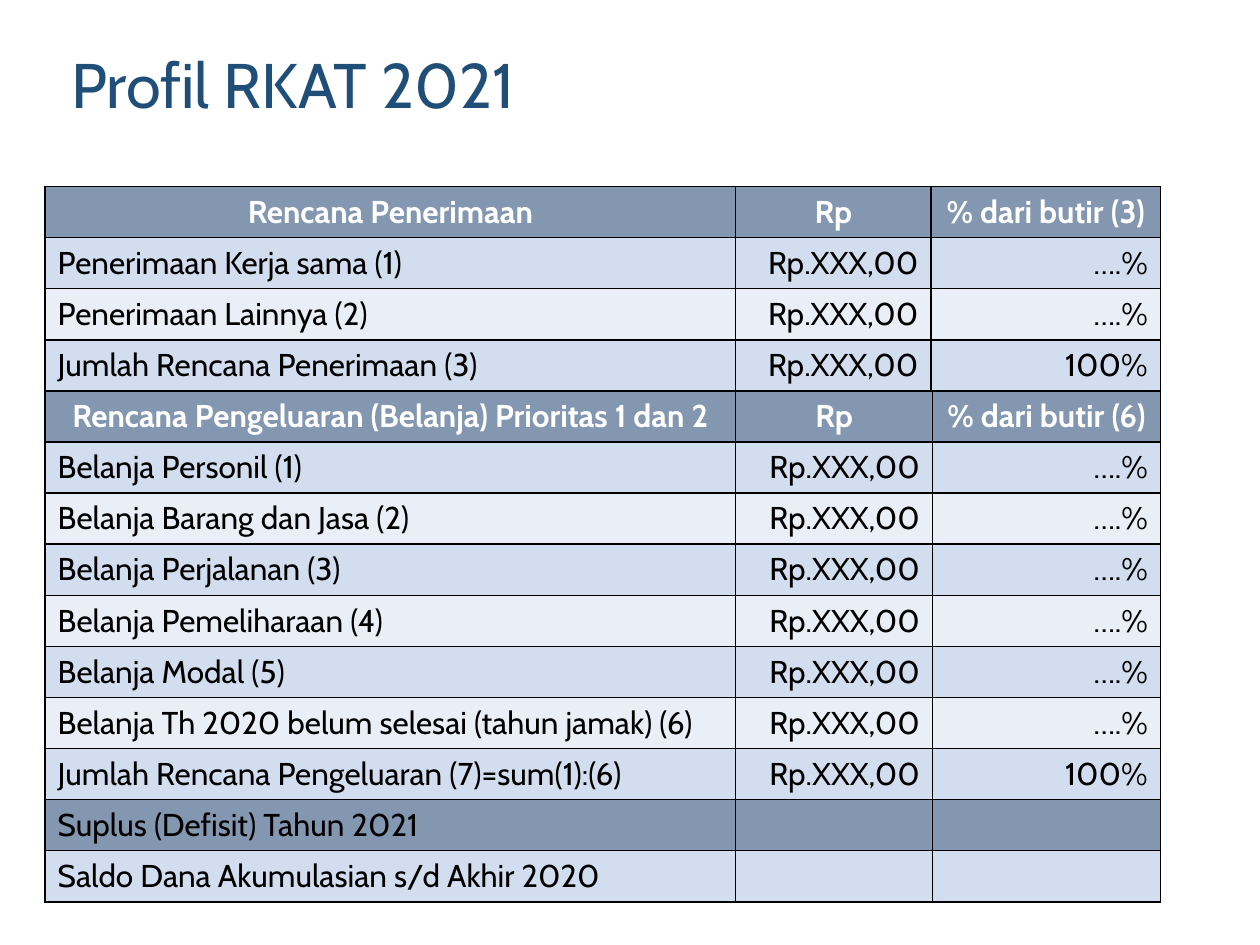
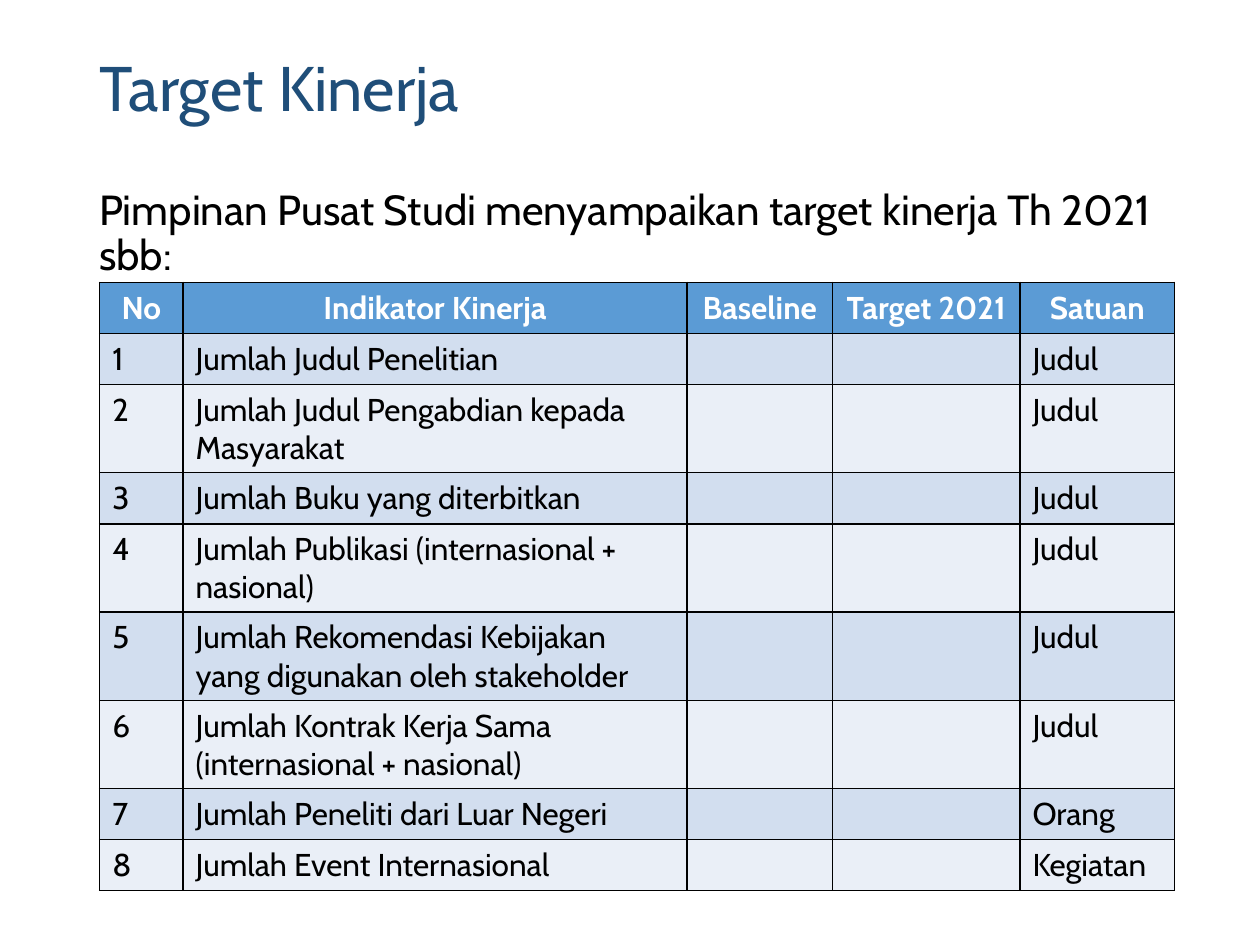
from pptx import Presentation
from pptx.dml.color import RGBColor
from pptx.enum.text import MSO_ANCHOR, PP_ALIGN
from pptx.util import Cm, Pt
from lxml.etree import SubElement
from pptx.oxml.ns import qn

# Shared look
FONT = "Cabin"
HUES = {"title": "1F4E79", "text": "000000", "white": "FFFFFF", "slate": "8497B0",
        "blue": "5B9BD5", "odd": "D2DEEF", "even": "EAEFF7", "rule": "000000"}
LEFT, MID, RIGHT = PP_ALIGN.LEFT, PP_ALIGN.CENTER, PP_ALIGN.RIGHT
ROW = 1.03


def write(para, text, size, hue, bold=False, align=LEFT):
    para.alignment = align
    run = para.add_run()
    run.text = text
    run.font.name, run.font.size, run.font.bold = FONT, Pt(size), bold
    run.font.color.rgb = RGBColor.from_string(HUES[hue])


def grid(slide, left, top, widths, aligns, rows, head, bands=(0,)):
    """Add a ruled table; the rows listed in bands take the head colour."""
    table = slide.shapes.add_table(len(rows), len(widths), Cm(left), Cm(top),
                                   Cm(sum(widths)), Cm(ROW * len(rows))).table
    for col, width in zip(table.columns, widths):
        col.width = Cm(width)
    for r, row in enumerate(rows):
        table.rows[r].height = Cm(ROW)
        fill = head if r in bands else ("even", "odd")[r % 2]
        for c, text in enumerate(row):
            cell = table.cell(r, c)
            props = cell._tc.get_or_add_tcPr()
            for side in ("lnL", "lnR", "lnT", "lnB"):
                line = SubElement(props, qn(f"a:{side}"), w=str(Pt(1)))
                paint = SubElement(line, qn("a:solidFill"))
                SubElement(paint, qn("a:srgbClr"), val=HUES["rule"])
            cell.fill.solid()
            cell.fill.fore_color.rgb = RGBColor.from_string(HUES[fill])
            para = cell.text_frame.paragraphs[0]
            if text and r == 0:
                write(para, text, 18, "white", True, MID)
            elif text:
                write(para, text, 18, "text", False, aligns[c])


deck = Presentation()
deck.slide_width, deck.slide_height = Cm(25.4), Cm(19.05)

# Slides with their titles and the lead text
plan = Presentation  # replaced by the first slide below
boxes = [
    [("Profil RKAT 2021", 36, "title", MSO_ANCHOR.MIDDLE, (1.19, 0.64, 21.9, 2.26))],
    [("Target Kinerja", 36, "title", MSO_ANCHOR.MIDDLE, (1.75, 0, 21.9, 3.68)),
     ("Pimpinan Pusat Studi menyampaikan target kinerja Th 2021 sbb:", 24, "text",
      MSO_ANCHOR.TOP, (1.75, 3.68, 21.9, 2))],
]
slides = []
for group in boxes:
    slide = deck.slides.add_slide(deck.slide_layouts[6])
    slides.append(slide)
    for text, size, hue, anchor, place in group:
        frame = slide.shapes.add_textbox(*map(Cm, place)).text_frame
        frame.word_wrap = True
        frame.vertical_anchor = anchor
        para = frame.paragraphs[0]
        para.line_spacing = 0.9
        write(para, text, size, hue)
plan, target = slides

# Slide 1: income and spending
sums, part, full = "Rp.XXX,00", "….%", "100%"
income = [
    ("Rencana Penerimaan", "Rp", "% dari butir (3)"),
    ("Penerimaan Kerja sama (1)", sums, part),
    ("Penerimaan Lainnya (2)", sums, part),
    ("Jumlah Rencana Penerimaan (3)", sums, full),
]
costs = ["Belanja Personil (1)", "Belanja Barang dan Jasa (2)", "Belanja Perjalanan (3)",
         "Belanja Pemeliharaan (4)", "Belanja Modal (5)",
         "Belanja Th 2020 belum selesai (tahun jamak) (6)"]
spend = [
    ("Rencana Pengeluaran (Belanja) Prioritas 1 dan 2", "Rp", "% dari butir (6)"),
    *[(cost, sums, part) for cost in costs],
    ("Jumlah Rencana Pengeluaran (7)=sum(1):(6)", sums, full),
    ("Suplus (Defisit) Tahun 2021", "", ""),
    ("Saldo Dana Akumulasian s/d Akhir 2020", "", ""),
]
aligns = (LEFT, RIGHT, RIGHT)
grid(plan, 0.91, 3.76, (13.92, 3.94, 4.62), aligns, income, "slate")
grid(plan, 0.91, 3.76 + ROW * len(income), (13.92, 3.97, 4.59), aligns, spend, "slate", (0, 8))

# Slide 2: targets by indicator
goals = [
    ("Jumlah Judul Penelitian", "Judul"),
    ("Jumlah Judul Pengabdian kepada Masyarakat", "Judul"),
    ("Jumlah Buku yang diterbitkan", "Judul"),
    ("Jumlah Publikasi (internasional + nasional)", "Judul"),
    ("Jumlah Rekomendasi Kebijakan yang digunakan oleh stakeholder", "Judul"),
    ("Jumlah Kontrak Kerja Sama (internasional + nasional)", "Judul"),
    ("Jumlah Peneliti dari Luar Negeri", "Orang"),
    ("Jumlah Event Internasional", "Kegiatan"),
]
rows = [("No", "Indikator Kinerja", "Baseline", "Target 2021", "Satuan")]
rows += [(str(n), goal, "", "", unit) for n, (goal, unit) in enumerate(goals, 1)]
grid(target, 2.01, 5.69, (1.68, 10.16, 2.93, 3.78, 3.12), (LEFT,) * 5, rows, "blue")

deck.save("out.pptx")
